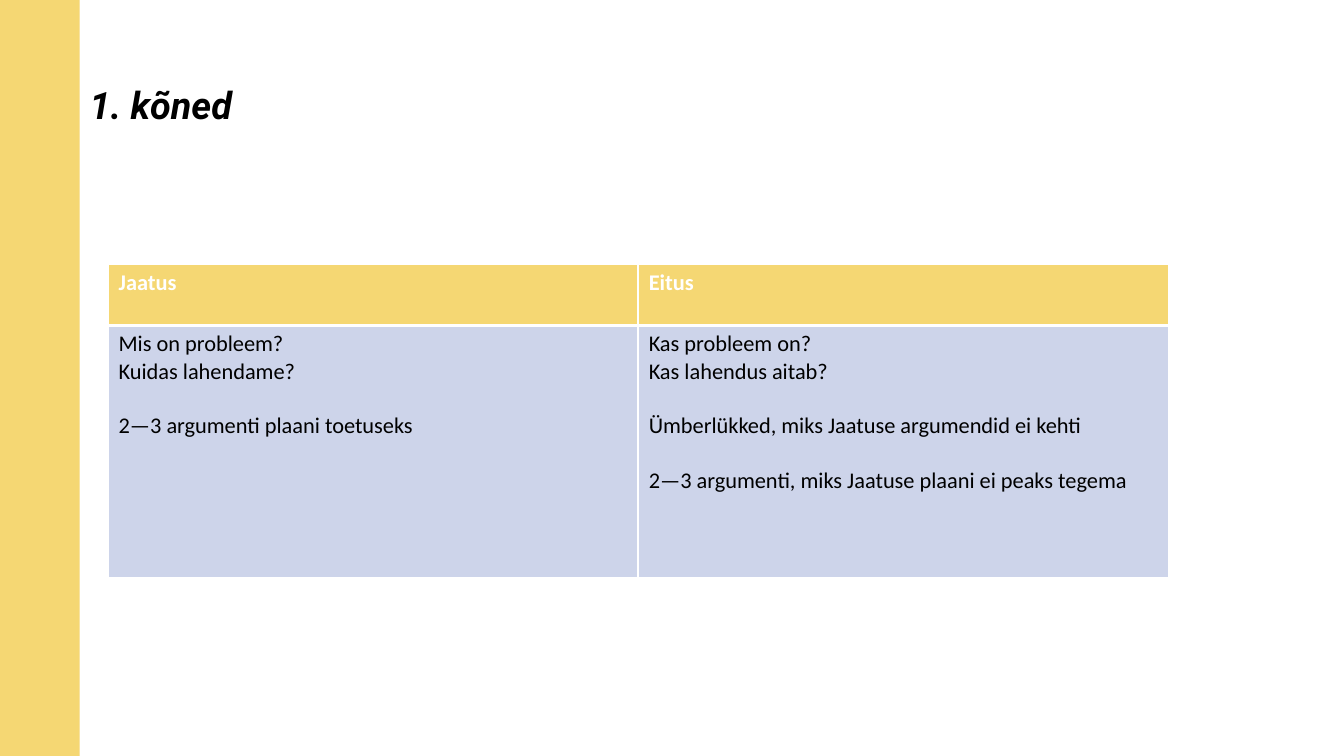
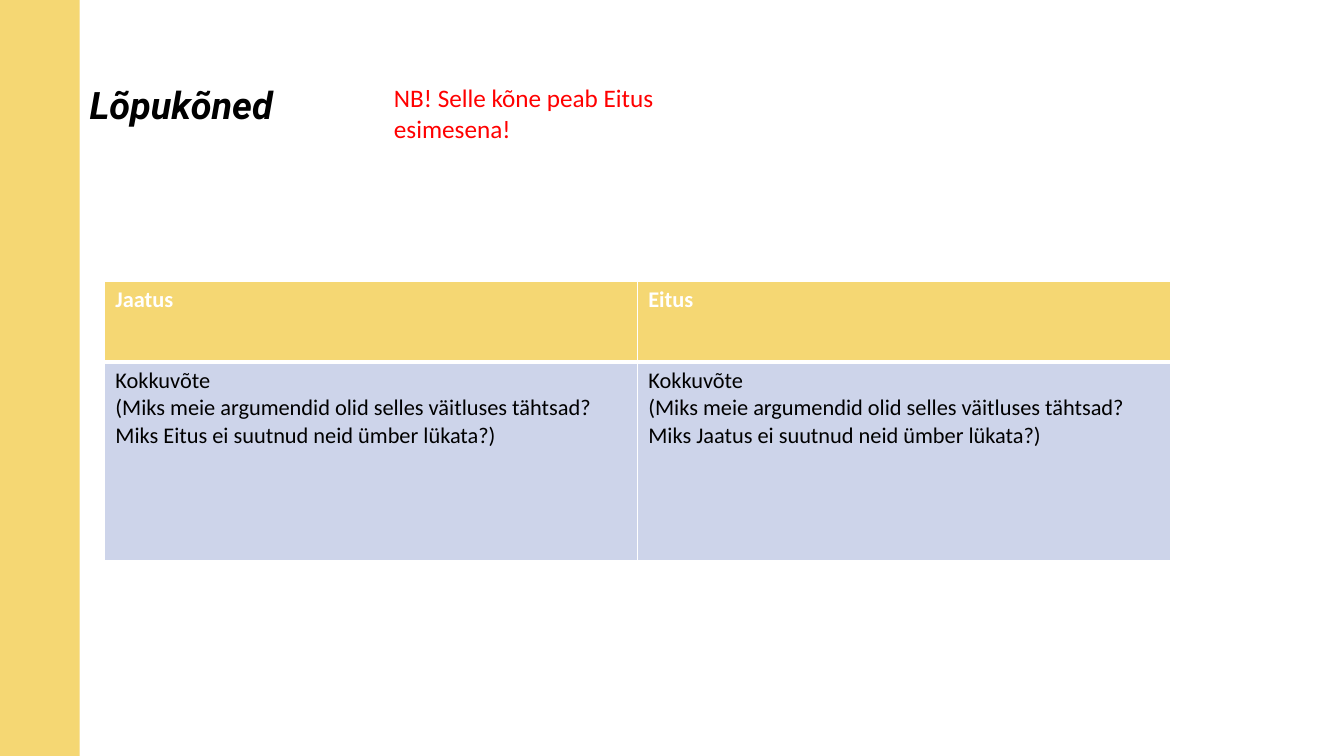
from lxml import etree
from pptx import Presentation
from pptx.dml.color import RGBColor
from pptx.enum import shapes, text
from pptx.oxml import ns
from pptx.util import Cm, Pt

HUES = {"gold": "F5D773", "pale": "CDD4EA", "white": "FFFFFF",
        "black": "000000", "red": "FF0000"}
WIDE, HIGH, BAND = 33.87, 19.05, 2.01


def hue(name):
    return RGBColor.from_string(HUES[name])


def write(frame, lines, font="Calibri", size=16, color="black",
          bold=False, italic=False, lead=None, gap=0):
    frame.word_wrap = True
    for i, (line, apart) in enumerate(lines):
        para = frame.paragraphs[0] if i == 0 else frame.add_paragraph()
        if lead:
            para.line_spacing = lead
        if apart:
            para.space_before = Pt(gap)
        run = para.add_run()
        run.text = line
        face = run.font
        face.name, face.size = font, Pt(size)
        face.bold, face.italic = bold, italic
        face.color.rgb = hue(color)


class Deck:
    def __init__(self):
        self.show = Presentation()
        self.show.slide_width, self.show.slide_height = Cm(WIDE), Cm(HIGH)

    def page(self, title):
        self.slide = self.show.slides.add_slide(self.show.slide_layouts[6])
        self.band()
        self.label(title, 2.01, 1.65, 27, 2.11, middle=True,
                   font="Roboto", size=27, bold=True, italic=True, lead=0.9)

    def band(self):
        bar = self.slide.shapes.add_shape(
            shapes.MSO_SHAPE.RECTANGLE, 0, 0, Cm(BAND), Cm(HIGH))
        bar.shadow.inherit = False
        bar.fill.solid()
        bar.fill.fore_color.rgb = hue("gold")
        bar.line.fill.background()

    def label(self, words, left, top, width, height, middle=False, **style):
        box = self.slide.shapes.add_textbox(
            Cm(left), Cm(top), Cm(width), Cm(height))
        if middle:
            box.text_frame.vertical_anchor = text.MSO_ANCHOR.MIDDLE
        write(box.text_frame, [(words, False)], **style)

    def table(self, left, top, width, rows, cells):
        grid = self.slide.shapes.add_table(
            2, 2, Cm(left), Cm(top), Cm(width), Cm(sum(rows))).table
        for row, height in zip(grid.rows, rows):
            row.height = Cm(height)
        for col in grid.columns:
            col.width = Cm(width / 2)
        for c, head in enumerate(("Jaatus", "Eitus")):
            self.cell(grid.cell(0, c), [(head, False)], "gold", low=3,
                      color="white", bold=True)
            self.cell(grid.cell(1, c), cells[c], "pale", high=3, gap=19.5)

    def cell(self, cell, lines, fill, high=1, low=1, **style):
        cell.margin_left = cell.margin_right = Cm(0.27)
        cell.fill.solid()
        cell.fill.fore_color.rgb = hue(fill)
        write(cell.text_frame, lines, **style)
        props = cell._tc.get_or_add_tcPr()
        sides = (("L", 1), ("R", 1), ("T", high), ("B", low))
        for i, (side, thick) in enumerate(sides):
            edge = etree.Element(ns.qn("a:ln" + side), w=str(Pt(thick)))
            solid = etree.SubElement(edge, ns.qn("a:solidFill"))
            etree.SubElement(solid, ns.qn("a:srgbClr"), val=HUES["white"])
            props.insert(i, edge)


def closing(rival):
    return [("Kokkuvõte", False),
            ("(Miks meie argumendid olid selles väitluses tähtsad? "
             f"Miks {rival} ei suutnud neid ümber lükata?)", False)]


def main():
    deck = Deck()
    deck.page("1. kõned")
    deck.table(2.72, 6.65, 26.72, (1.55, 6.35), (
        [("Mis on probleem?", False),
         ("Kuidas lahendame?", False),
         ("2—3 argumenti plaani toetuseks", True)],
        [("Kas probleem on?", False),
         ("Kas lahendus aitab?", False),
         ("Ümberlükked, miks Jaatuse argumendid ei kehti", True),
         ("2—3 argumenti, miks Jaatuse plaani ei peaks tegema", True)]))

    deck.page("Lõpukõned")
    deck.table(2.64, 7.09, 26.86, (2.03, 5),
               (closing("Eitus"), closing("Jaatus")))
    deck.label("NB! Selle kõne peab Eitus esimesena!",
               9.68, 1.96, 9.6, 1.8, size=18, color="red")
    deck.show.save("out.pptx")


if __name__ == "__main__":
    main()
